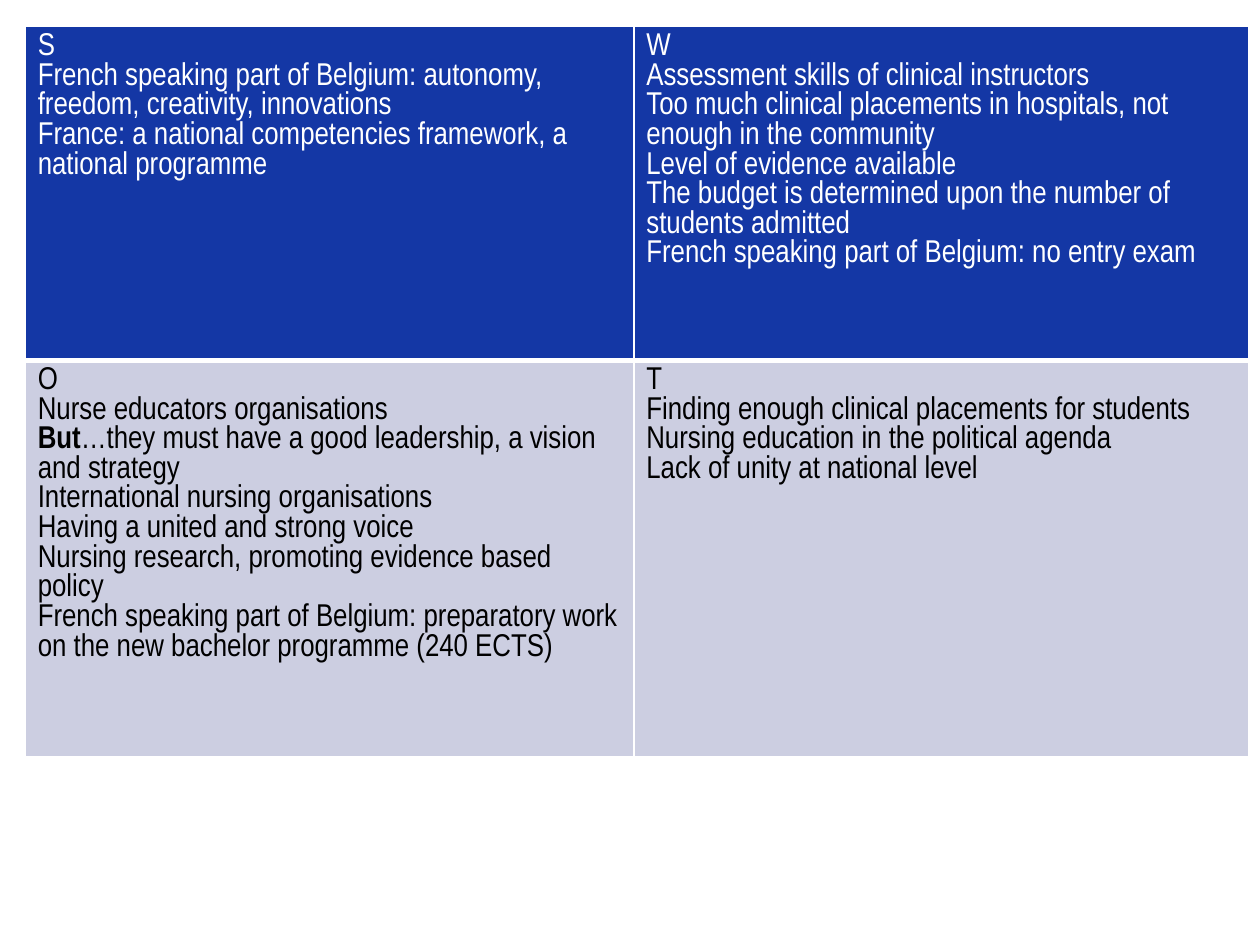
from lxml import etree
from pptx import Presentation
from pptx.dml.color import RGBColor
from pptx.oxml import ns
from pptx.util import Pt

COLORS = {"blue": "1437A5", "lavender": "CCCEE1", "white": "FFFFFF", "black": "000000"}
FONT = "Arial Narrow"
EMPHASIS = "But"

strengths = [
    "S",
    "French speaking part of Belgium: autonomy, freedom, creativity, innovations",
    "France: a national competencies framework, a national programme",
]
weaknesses = [
    "W",
    "Assessment skills of clinical instructors",
    "Too much clinical placements in hospitals, not enough in the community",
    "Level of evidence available",
    "The budget is determined upon the number of students admitted",
    "French speaking part of Belgium: no entry exam",
]
opportunities = [
    "O",
    "Nurse educators organisations",
    "But…they must have a good leadership, a vision and strategy",
    "International nursing organisations",
    "Having a united and strong voice",
    "Nursing research, promoting evidence based policy",
    "French speaking part of Belgium: preparatory work on the new bachelor programme (240 ECTS)",
]
threats = [
    "T",
    "Finding enough clinical placements for students",
    "Nursing education in the political agenda",
    "Lack of unity at national level",
]
swot_rows = [
    ([strengths, weaknesses], 190.8, "blue", "white", 3),
    ([opportunities, threats], 226.8, "lavender", "black", 1),
]
column_widths = [347.76, 351.36]


def add_borders(cell, bottom_width):
    properties = cell._tc.get_or_add_tcPr()
    sides = [("lnL", 1), ("lnR", 1), ("lnT", 1), ("lnB", bottom_width)]
    for position, (side, width) in enumerate(sides):
        line = etree.Element(ns.qn(f"a:{side}"), w=str(Pt(width)))
        fill = etree.SubElement(line, ns.qn("a:solidFill"))
        etree.SubElement(fill, ns.qn("a:srgbClr"), val=COLORS["white"])
        properties.insert(position, line)


presentation = Presentation()
presentation.slide_width = Pt(720)
presentation.slide_height = Pt(540)
slide = presentation.slides.add_slide(presentation.slide_layouts[6])

swot = slide.shapes.add_table(
    2, 2, Pt(14.4), Pt(15.12), Pt(sum(column_widths)), Pt(417.6)
).table
swot.horz_banding = False
for column, width in zip(swot.columns, column_widths):
    column.width = Pt(width)

for row, (quadrants, height, fill, ink, bottom_width) in zip(swot.rows, swot_rows):
    row.height = Pt(height)
    for cell, points in zip(row.cells, quadrants):
        cell.fill.solid()
        cell.fill.fore_color.rgb = RGBColor.from_string(COLORS[fill])
        add_borders(cell, bottom_width)
        cell.text_frame.text = "\n".join(points)
        for paragraph in cell.text_frame.paragraphs:
            if paragraph.text.startswith(EMPHASIS):
                remainder = paragraph.text.removeprefix(EMPHASIS)
                paragraph.text = EMPHASIS
                paragraph.add_run().text = remainder
            for run in paragraph.runs:
                run.font.name = FONT
                run.font.size = Pt(18)
                run.font.bold = run.text == EMPHASIS
                run.font.color.rgb = RGBColor.from_string(COLORS[ink])

presentation.save("out.pptx")
